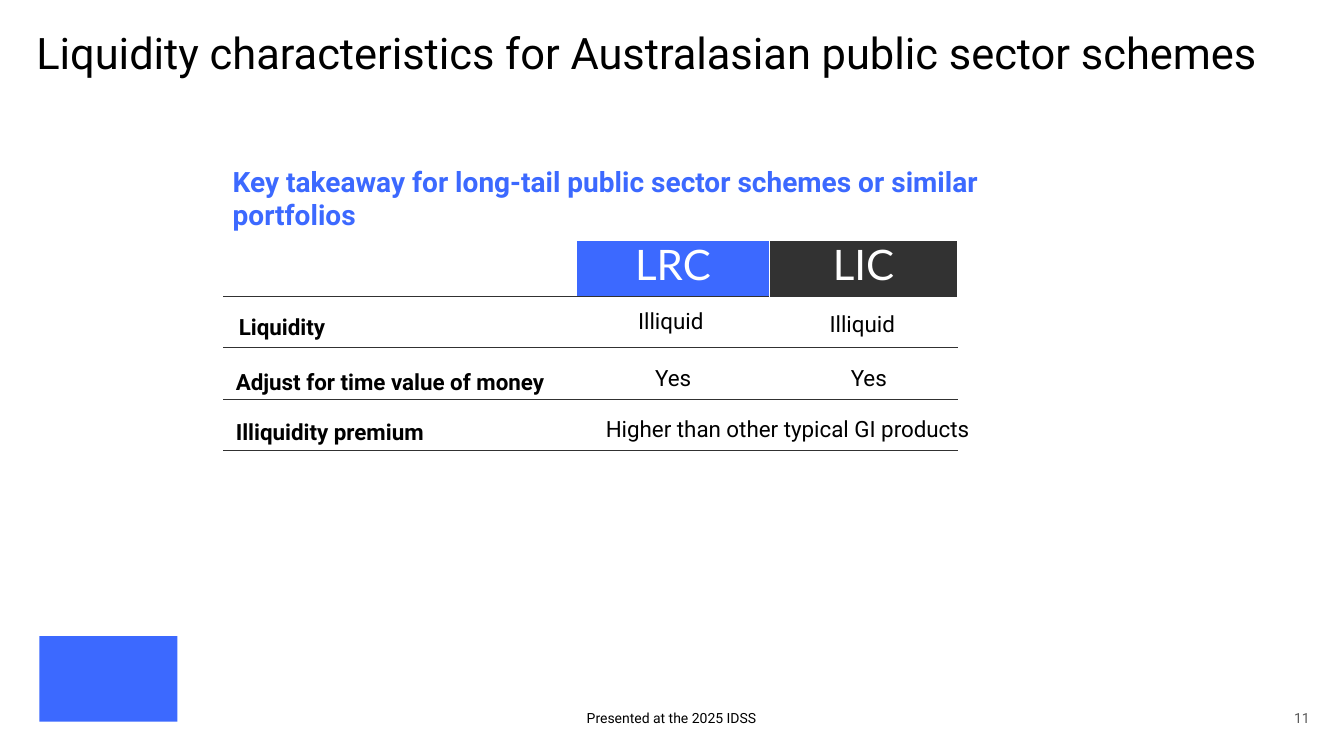
from pptx import Presentation
from pptx.dml.color import RGBColor
from pptx.enum.shapes import MSO_SHAPE
from pptx.enum.text import MSO_ANCHOR as ANCHOR, PP_ALIGN as ALIGN
from pptx.oxml import parse_xml
from pptx.oxml.ns import nsdecls
from pptx.util import Inches, Pt

BLUE, DARK, WHITE, BLACK, GREY = "3C69FF", "323232", "FFFFFF", "000000", "5B5B5B"
RULE = "313131"


def rgb(color):
    return RGBColor.from_string(color)


def write(tf, text, size=16, color=BLACK, font="Roboto", bold=False,
          align=ALIGN.LEFT, spacing=None):
    """Fill the first paragraph of a text frame with one formatted run."""
    p = tf.paragraphs[0]
    p.alignment = align
    if spacing:
        p.line_spacing = spacing
    r = p.add_run()
    r.text = text
    r.font.size, r.font.name, r.font.bold = Pt(size), font, bold
    r.font.color.rgb = rgb(color)


def border(cell, side, color):
    """Draw a half-point line on one side (L, R, T or B) of a cell."""
    cell._tc.get_or_add_tcPr().append(parse_xml(
        f'<a:ln{side} {nsdecls("a")} w="{Pt(0.5)}"><a:solidFill>'
        f'<a:srgbClr val="{color}"/></a:solidFill></a:ln{side}>'))


class SlideBuilder:
    def __init__(self, slide):
        self.s = slide

    def text(self, text, x, y, w, h, inset=True, anchor=ANCHOR.TOP, **fmt):
        tf = self.s.shapes.add_textbox(
            Inches(x), Inches(y), Inches(w), Inches(h)).text_frame
        tf.word_wrap = True
        tf.vertical_anchor = anchor
        if not inset:
            tf.margin_left = tf.margin_right = tf.margin_top = tf.margin_bottom = 0
        write(tf, text, **fmt)

    def block(self, x, y, w, h, color):
        sp = self.s.shapes.add_shape(MSO_SHAPE.RECTANGLE, Inches(x), Inches(y),
                                     Inches(w), Inches(h))
        sp.shadow.inherit = False
        sp.fill.solid()
        sp.fill.fore_color.rgb = rgb(color)
        sp.line.fill.background()

    def table(self, x, y, widths, heights, headers):
        """Ruled grid; headers maps a column to its heading and fill."""
        table = self.s.shapes.add_table(
            len(heights), len(widths), Inches(x), Inches(y),
            Inches(sum(widths)), Inches(sum(heights))).table
        table.first_row = table.horz_banding = False
        for col, width in zip(table.columns, widths):
            col.width = Inches(width)
        for row, height in zip(table.rows, heights):
            row.height = Inches(height)
        for i, row in enumerate(table.rows):
            for j, cell in enumerate(row.cells):
                heading = headers.get(j) if i == 0 else None
                if heading:
                    for side in "LRT":
                        border(cell, side, WHITE)
                elif i:
                    border(cell, "T", RULE)
                border(cell, "B", RULE)
                if not heading:
                    cell.fill.background()
                    continue
                label, fill = heading
                cell.fill.solid()
                cell.fill.fore_color.rgb = rgb(fill)
                cell.margin_top = cell.margin_bottom = Inches(0.06)
                write(cell.text_frame, label, size=30, color=WHITE, font="Lato",
                      align=ALIGN.CENTER, spacing=0.85)
        return table


def main():
    prs = Presentation()
    prs.slide_width, prs.slide_height = Inches(13.33), Inches(7.5)
    slide = SlideBuilder(prs.slides.add_slide(prs.slide_layouts[6]))

    slide.block(0.39, 6.31, 1.37, 0.85, BLUE)
    slide.text("Liquidity characteristics for Australasian public sector schemes",
               0.36, 0.32, 12.18, 1.35, inset=False, size=31, spacing=0.9)
    slide.text("11", 12.53, 7.01, 0.46, 0.2, inset=False, anchor=ANCHOR.BOTTOM,
               size=10, color=GREY, align=ALIGN.RIGHT)
    slide.text("Presented at the 2025 IDSS", 4.41, 7.01, 4.5, 0.2, inset=False,
               anchor=ANCHOR.BOTTOM, size=10, align=ALIGN.CENTER)

    table = slide.table(2.22, 2.38, [3.5, 1.91, 1.87], [0.56] + [0.51] * 3,
                        {1: ("LRC", BLUE), 2: ("LIC", DARK)})
    table.cell(3, 1).merge(table.cell(3, 2))

    slide.text("Key takeaway for long-tail public sector schemes or similar portfolios",
               2.21, 1.58, 8.83, 0.44, size=20, color=BLUE, bold=True)
    for label, x, y, w in [("Liquidity", 2.27, 3.06, 2.49),
                           ("Adjust for time value of money", 2.24, 3.6, 3.51),
                           ("Illiquidity premium", 2.24, 4.1, 3.51)]:
        slide.text(label, x, y, w, 0.37, bold=True)
    for answer, x, y, w in [("Illiquid", 6.23, 3, 0.87),
                            ("Illiquid", 8.13, 3.03, 0.87),
                            ("Yes", 6.4, 3.56, 0.87),
                            ("Yes", 8.34, 3.56, 0.87),
                            ("Higher than other typical GI products", 5.91, 4.07, 4.11)]:
        slide.text(answer, x, y, w, 0.37)

    prs.save("out.pptx")


if __name__ == "__main__":
    main()
